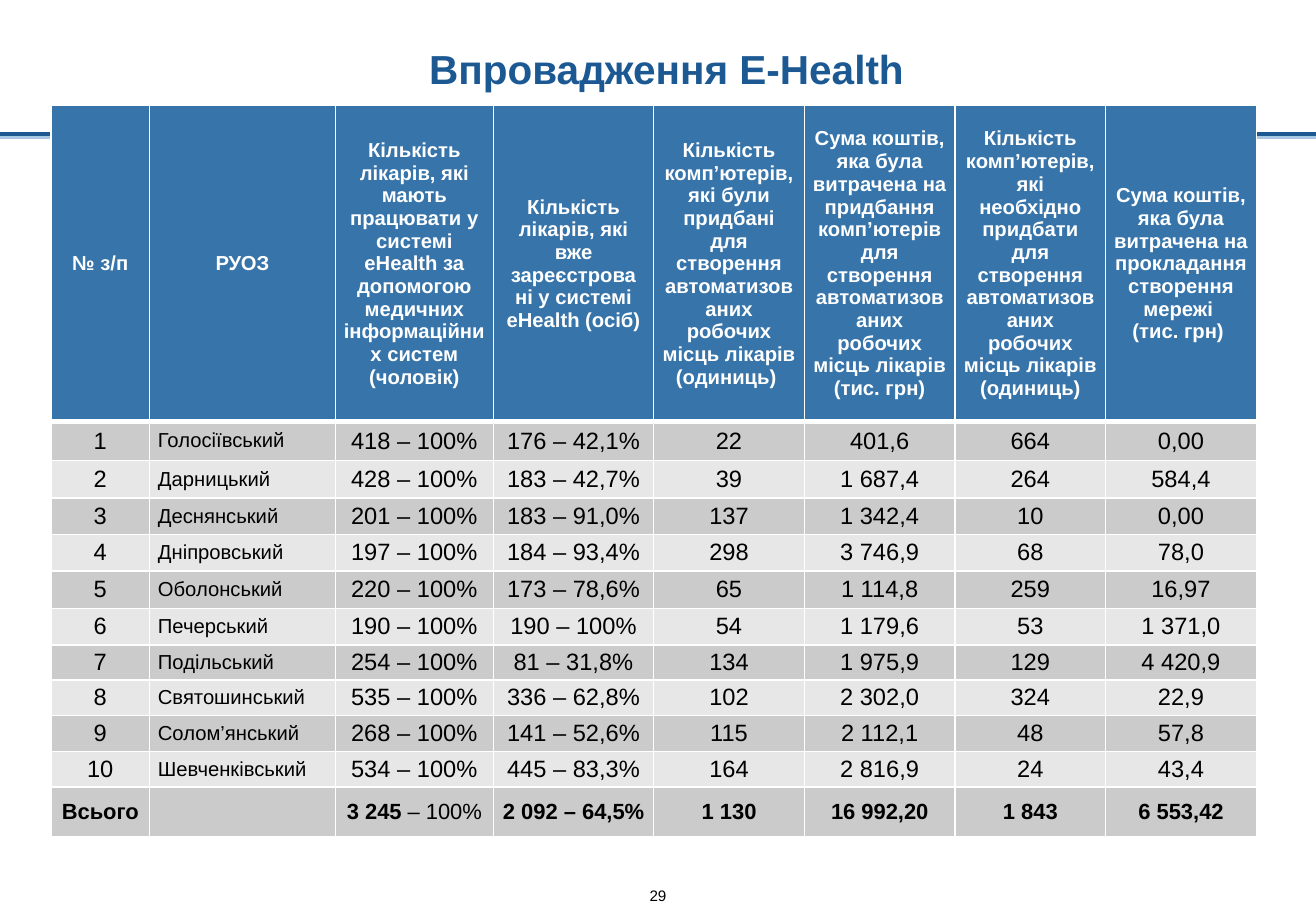
"""Build the E-Health rollout slide with its table of districts."""
import pptx
import pptx.util
import pptx.dml.color
import pptx.enum.text
import pptx.oxml
import pptx.oxml.ns
from pptx.util import Inches

COLORS = {
    "title": "1C5993",
    "shadow": "A8C7E2",
    "header": "3674AA",
    "dark": "CBCBCB",
    "light": "E7E7E7",
    "white": "FFFFFF",
    "black": "000000",
}
ALIGN = pptx.enum.text.PP_ALIGN
ANCHOR = pptx.enum.text.MSO_ANCHOR
NAMESPACE = pptx.oxml.ns.nsdecls("a")

HEADERS = [
    "№ з/п",
    "РУОЗ",
    "Кількість лікарів, які мають працювати у системі eHealth за допомогою медичних інформаційних систем (чоловік)",
    "Кількість лікарів, які вже зареєстрова\nні у системі eHealth (осіб)",
    "Кількість комп’ютерів, які були придбані для створення автоматизованих робочих місць лікарів (одиниць) ",
    "Сума коштів, яка була витрачена на придбання комп’ютерів для створення автоматизованих робочих місць лікарів \n(тис. грн)",
    "Кількість комп’ютерів, які необхідно придбати для створення автоматизованих робочих місць лікарів (одиниць)",
    "Сума коштів, яка була витрачена на прокладання створення мережі \n(тис. грн) ",
]
DISTRICTS = [
    ["1", "Голосіївський", "418 – 100%", "176 – 42,1%", "22", "401,6", "664", "0,00"],
    ["2", "Дарницький", "428 – 100%", "183 – 42,7%", "39", "1 687,4", "264", "584,4"],
    ["3", "Деснянський", "201 – 100%", "183 – 91,0%", "137", "1 342,4", "10", "0,00"],
    ["4", "Дніпровський", "197 – 100%", "184 – 93,4%", "298", "3 746,9", "68", "78,0"],
    ["5", "Оболонський", "220 – 100%", "173 – 78,6%", "65", "1 114,8", "259", "16,97"],
    ["6", "Печерський", "190 – 100%", "190 – 100%", "54", "1 179,6", "53", "1 371,0"],
    ["7", "Подільський", "254 – 100%", "81 – 31,8%", "134", "1 975,9", "129", "4 420,9"],
    ["8", "Святошинський", "535 – 100%", "336 – 62,8%", "102", "2 302,0", "324", "22,9"],
    ["9", "Солом’янський", "268 – 100%", "141 – 52,6%", "115", "2 112,1", "48", "57,8"],
    ["10", "Шевченківський", "534 – 100%", "445 – 83,3%", "164", "2 816,9", "24", "43,4"],
]
TOTALS = ["Всього", "", "3 245 ", "2 092 – 64,5%", "1 130", "16 992,20", "1 843", "6 553,42"]
ROWS = [HEADERS] + DISTRICTS + [TOTALS]
COLUMN_WIDTHS = [0.81, 1.53, 1.3, 1.32, 1.24, 1.24, 1.24, 1.24]
ROW_HEIGHTS = [2.6, 0.32, 0.31, 0.3, 0.3, 0.31, 0.3, 0.29, 0.29, 0.3, 0.29, 0.41]


def format_text(frame, size, color, bold=False, align=ALIGN.CENTER):
    for para in frame.paragraphs:
        para.alignment = align
        for span in para.runs:
            span.font.name = "Arial"
            span.font.size = pptx.util.Pt(size)
            span.font.bold = bold
            span.font.color.rgb = pptx.dml.color.RGBColor.from_string(COLORS[color])


def style_cell(cell, fill, top, bottom):
    cell.vertical_anchor = ANCHOR.MIDDLE
    cell.margin_left = cell.margin_right = Inches(0.07)
    cell.margin_top = cell.margin_bottom = 0
    cell.fill.solid()
    cell.fill.fore_color.rgb = pptx.dml.color.RGBColor.from_string(COLORS[fill])
    properties = cell._tc.get_or_add_tcPr()
    for index, (side, points) in enumerate([("L", 1), ("R", 1), ("T", top), ("B", bottom)]):
        properties.insert(index, pptx.oxml.parse_xml(
            f'<a:ln{side} {NAMESPACE} w="{pptx.util.Pt(points)}"><a:solidFill>'
            f'<a:srgbClr val="{COLORS["white"]}"/></a:solidFill></a:ln{side}>'))


deck = pptx.Presentation()
deck.slide_width = Inches(10.83)
deck.slide_height = Inches(7.5)
page = deck.slides.add_slide(deck.slide_layouts[5])

title = page.shapes.title
title.left, title.top = Inches(0.88), Inches(0)
title.width, title.height = Inches(9.21), Inches(0.81)
frame = title.text_frame
frame.text = "Впровадження E-Health"
frame.auto_size = pptx.enum.text.MSO_AUTO_SIZE.NONE
frame.vertical_anchor = ANCHOR.BOTTOM
frame.margin_left = frame.margin_right = 0
format_text(frame, 24, "title", bold=True)

rule = page.shapes.add_connector(
    pptx.enum.shapes.MSO_CONNECTOR.STRAIGHT, Inches(10.83), Inches(1.1), Inches(0), Inches(1.1))
rule.line.color.rgb = pptx.dml.color.RGBColor.from_string(COLORS["title"])
rule.line.width = pptx.util.Pt(2.25)
rule._element.spPr.append(pptx.oxml.parse_xml(
    f'<a:effectLst {NAMESPACE}><a:outerShdw dist="{pptx.util.Pt(2)}" dir="5400000" algn="ctr" '
    f'rotWithShape="0"><a:srgbClr val="{COLORS["shadow"]}"/></a:outerShdw></a:effectLst>'))

table = page.shapes.add_table(
    len(ROWS), len(HEADERS), Inches(0.42), Inches(0.87),
    Inches(sum(COLUMN_WIDTHS)), Inches(sum(ROW_HEIGHTS))).table
for column, width in zip(table.columns, COLUMN_WIDTHS):
    column.width = Inches(width)
last = len(ROWS) - 1
for row, (texts, height) in enumerate(zip(ROWS, ROW_HEIGHTS)):
    table.rows[row].height = Inches(height)
    fill = "header" if row == 0 else "dark" if row % 2 or row == last else "light"
    for column, text in enumerate(texts):
        cell = table.cell(row, column)
        cell.text = text
        style_cell(cell, fill, 3 if row == 1 else 1, 3 if row == 0 else 1)
        if row == 0:
            format_text(cell.text_frame, 12, "white", bold=True)
        elif row == last:
            format_text(cell.text_frame, 13, "black", bold=True)
        elif column == 1:
            format_text(cell.text_frame, 12, "black", align=ALIGN.LEFT)
        else:
            format_text(cell.text_frame, 14, "black")

total_frame = table.cell(last, 2).text_frame
share = total_frame.paragraphs[0].add_run()
share.text = "– 100%"
format_text(total_frame, 13, "black")
total_frame.paragraphs[0].runs[0].font.bold = True

number = page.shapes.add_textbox(Inches(5.31), Inches(7.3), Inches(0.21), Inches(0.15))
frame = number.text_frame
frame.margin_left = frame.margin_right = frame.margin_top = frame.margin_bottom = 0
frame.word_wrap = False
frame.text = "29"
format_text(frame, 9, "black")

deck.save("out.pptx")
